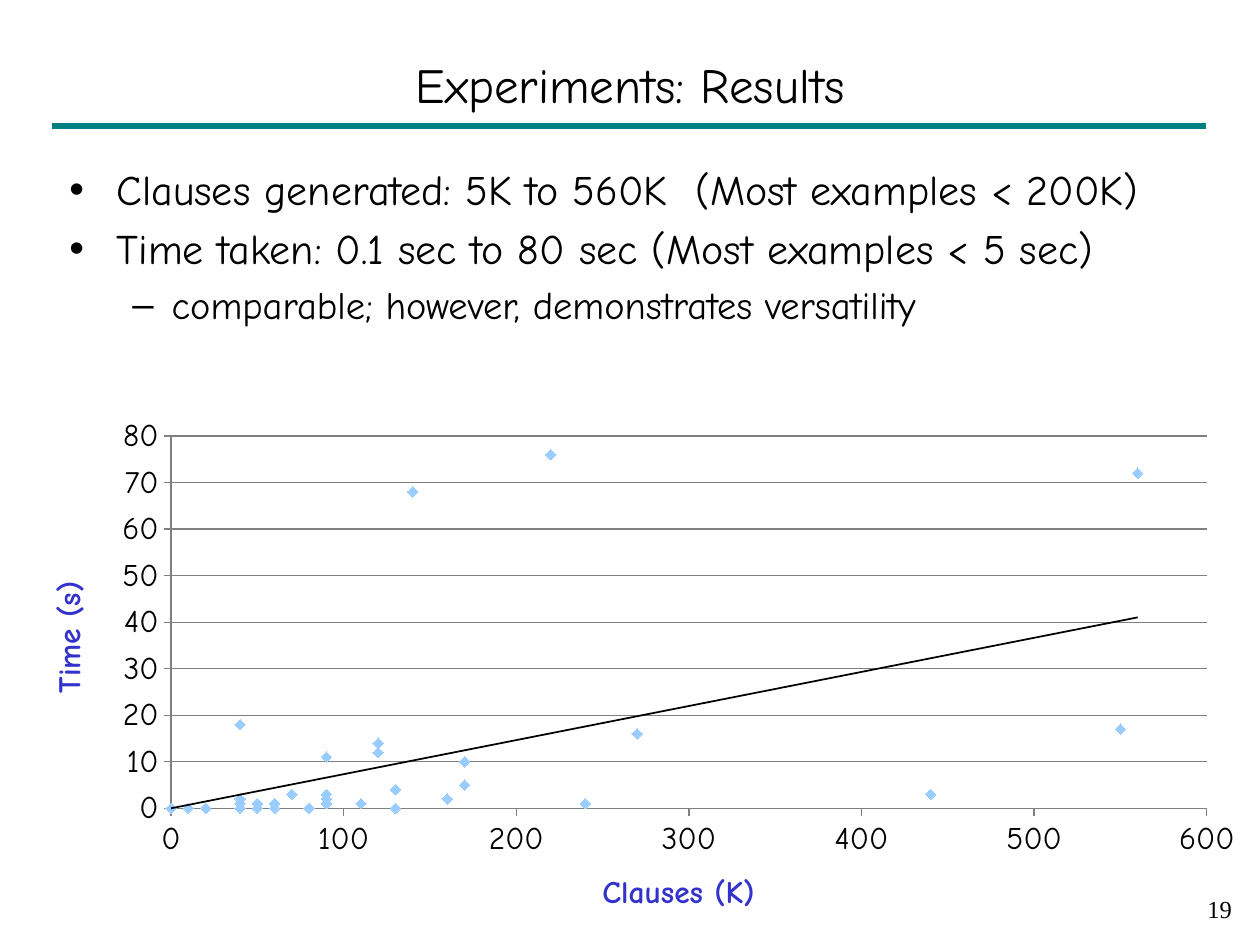
from lxml import etree
from pptx import Presentation
from pptx.chart.data import XyChartData
from pptx.dml.color import RGBColor
from pptx.enum.chart import XL_CHART_TYPE, XL_MARKER_STYLE, XL_TICK_MARK
from pptx.enum.shapes import MSO_CONNECTOR
from pptx.enum.text import MSO_ANCHOR, MSO_AUTO_SIZE, PP_ALIGN
from pptx.oxml import parse_xml
from pptx.oxml.ns import nsdecls, qn
from pptx.util import Pt

SCATTER = XL_CHART_TYPE.XY_SCATTER
DIAMOND = XL_MARKER_STYLE.DIAMOND
TICK_OUTSIDE = XL_TICK_MARK.OUTSIDE
STRAIGHT = MSO_CONNECTOR.STRAIGHT
LEFT, CENTER, RIGHT = PP_ALIGN.LEFT, PP_ALIGN.CENTER, PP_ALIGN.RIGHT
MIDDLE = MSO_ANCHOR.MIDDLE
NO_AUTOFIT = MSO_AUTO_SIZE.NONE

COLORS = {"text": "000000", "rule": "008080", "axis_title": "3333CC",
          "marker": "99CCFF", "grid": "808080"}
FONT = "Comic Neue"
NUMBER_FONT = "Times New Roman"

# (text, level, size, left margin, hanging indent, bullet)
BULLETS = [
    ("Clauses generated: 5K to 560K  (Most examples < 200K)", 0, 24, 27, 27, "•"),
    ("Time taken: 0.1 sec to 80 sec (Most examples < 5 sec)", 0, 24, 27, 27, "•"),
    ("comparable; however, demonstrates versatility", 1, 22, 58.5, 22.5, "–"),
]
CLAUSES = [0, 50, 80, 440, 170, 70, 50, 50, 40, 90, 10, 90, 20, 240, 550, 20, 160, 60, 170,
           80, 40, 130, 90, 560, 110, 270, 60, 40, 130, 90, 40, 60, 40, 120, 220, 50, 120, 140]
SECONDS = [0, 1, 0, 3, 5, 3, 1, 1, 2, 3, 0, 1, 0, 1, 17, 0, 2, 1, 10,
           0, 0, 0, 11, 72, 1, 16, 1, 18, 4, 2, 1, 0, 1, 14, 76, 0, 12, 68]


def rgb(name):
    return RGBColor.from_string(COLORS[name])


def format_font(font, size, name=FONT, color="text", bold=False):
    font.size, font.name, font.bold = Pt(size), name, bold
    font.color.rgb = rgb(color)


def write_text(paragraph, text, align=LEFT, **font_format):
    paragraph.alignment = align
    run = paragraph.add_run()
    run.text = text
    format_font(run.font, **font_format)


def place(shape, left, top, width, height):
    shape.left, shape.top = Pt(left), Pt(top)
    shape.width, shape.height = Pt(width), Pt(height)


def set_bullet(paragraph, margin, hanging, character):
    properties = paragraph._p.get_or_add_pPr()
    properties.set("marL", str(Pt(margin)))
    properties.set("indent", str(-Pt(hanging)))
    bullet = etree.SubElement(properties, qn("a:buChar"))
    bullet.set("char", character)


def add_title(slide, text):
    title = slide.shapes.title
    place(title, 54, 24, 612, 48)
    title.text_frame.auto_size = NO_AUTOFIT
    title.text_frame.vertical_anchor = MIDDLE
    write_text(title.text_frame.paragraphs[0], text, align=CENTER, size=28)


def add_rule(slide):
    rule = slide.shapes.add_connector(STRAIGHT, Pt(30), Pt(72), Pt(689), Pt(72))
    rule.line.color.rgb = rgb("rule")
    rule.line.width = Pt(4)
    etree.SubElement(rule._element.spPr, qn("a:effectLst"))


def add_bullets(slide):
    body = slide.placeholders[1]
    place(body, 32.4, 90, 666, 396)
    frame = body.text_frame
    frame.auto_size = NO_AUTOFIT
    for index, (text, level, size, margin, hanging, character) in enumerate(BULLETS):
        paragraph = frame.add_paragraph() if index else frame.paragraphs[0]
        paragraph.level = level
        write_text(paragraph, text, size=size)
        set_bullet(paragraph, margin, hanging, character)


def add_slide_number(slide, number):
    box = slide.shapes.add_textbox(Pt(561), Pt(507.6), Pt(150), Pt(30))
    box.text_frame.word_wrap = True
    write_text(box.text_frame.paragraphs[0], number, align=RIGHT, size=14, name=NUMBER_FONT)


def format_axis(axis, title, maximum, step):
    axis.minimum_scale, axis.maximum_scale, axis.major_unit = 0, maximum, step
    axis.major_tick_mark = TICK_OUTSIDE
    axis.format.line.color.rgb = rgb("grid")
    axis.tick_labels.number_format = "General"
    axis.tick_labels.number_format_is_linked = False
    format_font(axis.tick_labels.font, 18)
    write_text(axis.axis_title.text_frame.paragraphs[0], title, align=CENTER,
               size=18, color="axis_title", bold=True)


def set_plot_layout(chart, x, y, width, height):
    """Fix the inner plot area, in fractions of the chart frame."""
    plot_area = chart._chartSpace.chart.plotArea
    for layout in plot_area.findall(qn("c:layout")):
        plot_area.remove(layout)
    plot_area.insert(0, parse_xml(
        f'<c:layout {nsdecls("c")}><c:manualLayout><c:layoutTarget val="inner"/>'
        '<c:xMode val="edge"/><c:yMode val="edge"/>'
        f'<c:x val="{x}"/><c:y val="{y}"/><c:w val="{width}"/><c:h val="{height}"/>'
        '</c:manualLayout></c:layout>'))


def add_linear_trend(series):
    trend = parse_xml(
        f'<c:trendline {nsdecls("c", "a")}><c:spPr><a:ln w="{Pt(1)}"><a:solidFill>'
        f'<a:srgbClr val="{COLORS["text"]}"/></a:solidFill></a:ln></c:spPr>'
        '<c:trendlineType val="linear"/><c:dispRSqr val="0"/><c:dispEq val="0"/>'
        '</c:trendline>')
    series._element.find(qn("c:xVal")).addprevious(trend)


def add_scatter_chart(slide):
    data = XyChartData()
    points = data.add_series("Series 1")
    for clauses, seconds in zip(CLAUSES, SECONDS):
        points.add_data_point(clauses, seconds)
    chart = slide.shapes.add_chart(SCATTER, Pt(13.7), Pt(234), Pt(706.3), Pt(292.3), data).chart
    chart.has_legend = chart.has_title = False
    format_font(chart.font, 18)
    set_plot_layout(chart, 0.119, 0.052, 0.838, 0.728)

    format_axis(chart.category_axis, "Clauses (K)", 600, 100)
    format_axis(chart.value_axis, "Time (s)", 80, 10)
    chart.category_axis.has_major_gridlines = False
    chart.value_axis.has_major_gridlines = True
    chart.value_axis.major_gridlines.format.line.color.rgb = rgb("grid")

    chart.plots[0].vary_by_categories = False
    series = chart.plots[0].series[0]
    series.smooth = False
    series.format.line.fill.background()
    series.marker.style, series.marker.size = DIAMOND, 6
    series.marker.format.fill.solid()
    series.marker.format.fill.fore_color.rgb = rgb("marker")
    series.marker.format.line.fill.background()
    add_linear_trend(series)


def main():
    presentation = Presentation()
    presentation.slide_width, presentation.slide_height = Pt(720), Pt(540)
    slide = presentation.slides.add_slide(presentation.slide_layouts[1])
    add_rule(slide)
    add_title(slide, "Experiments: Results")
    add_bullets(slide)
    add_slide_number(slide, "19")
    add_scatter_chart(slide)
    presentation.save("out.pptx")


if __name__ == "__main__":
    main()
